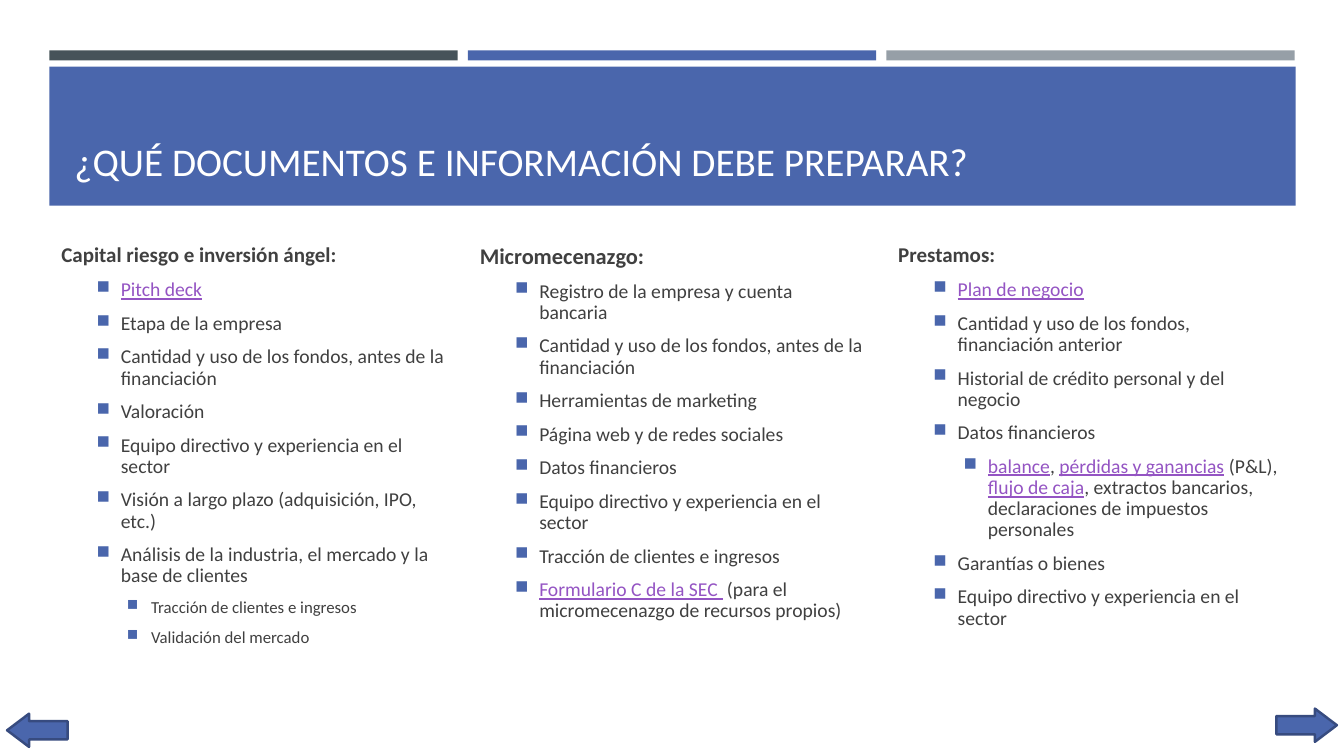
from dataclasses import dataclass

from lxml.etree import SubElement
from pptx import Presentation
from pptx.dml.color import RGBColor
from pptx.enum.shapes import MSO_SHAPE
from pptx.enum.text import MSO_ANCHOR
from pptx.oxml.ns import qn
from pptx.util import Emu, Pt


@dataclass(frozen=True)
class Theme:
    font: str = "Calibri"
    blue: str = "4A66AC"
    slate: str = "465359"
    gray: str = "969FA7"
    outline: str = "374B7F"
    body: str = "404040"
    link: str = "9454C3"
    white: str = "FFFFFF"
    title_size: int = 28
    item_size: int = 14
    detail_size: int = 12


THEME = Theme()
EMU_PER_PX = 9144
COLUMN_PITCH = 415

# Each column: heading, heading size, items as (level, size, text); |bars| enclose link text.
ITEM = (1, THEME.item_size)
DETAIL = (2, THEME.detail_size)
LARGE_DETAIL = (2, THEME.item_size)
COLUMNS = [
    ("Capital riesgo e inversión ángel:", 15, [
        (*ITEM, "|Pitch deck|"),
        (*ITEM, "Etapa de la empresa"),
        (*ITEM, "Cantidad y uso de los fondos, antes de la financiación"),
        (*ITEM, "Valoración"),
        (*ITEM, "Equipo directivo y experiencia en el sector"),
        (*ITEM, "Visión a largo plazo (adquisición, IPO, etc.)"),
        (*ITEM, "Análisis de la industria, el mercado y la base de clientes"),
        (*DETAIL, "Tracción de clientes e ingresos"),
        (*DETAIL, "Validación del mercado"),
    ]),
    ("Micromecenazgo:", 16, [
        (*ITEM, "Registro de la empresa y cuenta bancaria"),
        (*ITEM, "Cantidad y uso de los fondos, antes de la financiación"),
        (*ITEM, "Herramientas de marketing"),
        (*ITEM, "Página web y de redes sociales"),
        (*ITEM, "Datos financieros"),
        (*ITEM, "Equipo directivo y experiencia en el sector"),
        (*ITEM, "Tracción de clientes e ingresos"),
        (*ITEM, "|Formulario C de la SEC | (para el micromecenazgo de recursos propios)"),
    ]),
    ("Prestamos:", 15, [
        (*ITEM, "|Plan de negocio|"),
        (*ITEM, "Cantidad y uso de los fondos, financiación anterior"),
        (*ITEM, "Historial de crédito personal y del negocio"),
        (*ITEM, "Datos financieros"),
        (*LARGE_DETAIL, "|balance|, |pérdidas y ganancias| (P&L), |flujo de caja|, "
                        "extractos bancarios, declaraciones de impuestos personales"),
        (*ITEM, "Garantías o bienes"),
        (*ITEM, "Equipo directivo y experiencia en el sector"),
    ]),
]


def px(length):
    return Emu(length * EMU_PER_PX)


def color(code):
    return RGBColor.from_string(code)


def add_filled(slide, preset, box, fill):
    shape = slide.shapes.add_shape(preset, *map(px, box))
    shape.shadow.inherit = False
    shape.fill.solid()
    shape.fill.fore_color.rgb = color(fill)
    shape.line.fill.background()
    return shape


def add_text_frame(slide, box):
    frame = slide.shapes.add_textbox(*map(px, box)).text_frame
    frame.word_wrap = True
    return frame


def style_font(paragraph, size, code, bold=False):
    font = paragraph.font
    font.name, font.size, font.bold = THEME.font, Pt(size), bold
    font.color.rgb = color(code)


def add_bullet(paragraph, level):
    paragraph.level = level
    properties = paragraph._p.get_or_add_pPr()
    properties.set("marL", str(px(29 + 30 * level)))
    properties.set("indent", str(px(-24)))
    bullet_color = SubElement(properties, qn("a:buClr"))
    SubElement(bullet_color, qn("a:srgbClr"), val=THEME.blue)
    SubElement(properties, qn("a:buSzPct"), val="92000")
    SubElement(properties, qn("a:buChar"), char="■")


def space_paragraph(paragraph, size):
    paragraph.line_spacing = 0.9
    paragraph.space_before = Pt(size * 0.2)
    paragraph.space_after = Pt(6)


def add_linked_text(paragraph, text):
    """Write the text, styling the parts between bars as links."""
    for index, part in enumerate(text.split("|")):
        if not part:
            continue
        run = paragraph.add_run()
        run.text = part
        if index % 2:
            run.font.underline = True
            run.font.color.rgb = color(THEME.link)


def add_header(slide, left, top, width, height):
    """Three accent bars above a title band."""
    for index, fill in enumerate((THEME.slate, THEME.blue, THEME.gray)):
        add_filled(slide, MSO_SHAPE.RECTANGLE,
                   (left + index * COLUMN_PITCH, top, 405, 10), fill)
    add_filled(slide, MSO_SHAPE.RECTANGLE,
               (left, top + 16, width, height - 16), THEME.blue)
    frame = add_text_frame(slide, (left + 15, top + 30, width - 30, 108))
    frame.vertical_anchor = MSO_ANCHOR.BOTTOM
    title = frame.paragraphs[0]
    title.text = "¿QUÉ DOCUMENTOS E INFORMACIÓN DEBE PREPARAR?"
    style_font(title, THEME.title_size, THEME.white)


def add_column(slide, box, heading, heading_size, items):
    frame = add_text_frame(slide, box)
    head = frame.paragraphs[0]
    head.text = heading
    space_paragraph(head, heading_size)
    style_font(head, heading_size, THEME.body, bold=True)
    for level, size, text in items:
        item = frame.add_paragraph()
        space_paragraph(item, size)
        add_bullet(item, level)
        style_font(item, size, THEME.body)
        add_linked_text(item, text)


def add_navigation_arrow(slide, box, rotation):
    arrow = add_filled(slide, MSO_SHAPE.RIGHT_ARROW, box, THEME.blue)
    arrow.adjustments[0], arrow.adjustments[1] = 0.55, 0.66
    arrow.rotation = rotation
    arrow.line.color.rgb = color(THEME.outline)
    arrow.line.width = Pt(1.75)


def main():
    presentation = Presentation()
    presentation.slide_width, presentation.slide_height = px(1333), px(750)
    slide = presentation.slides.add_slide(presentation.slide_layouts[6])
    add_header(slide, 49, 50, 1236, 154)
    for index, column in enumerate(COLUMNS):
        add_column(slide, (51 + index * COLUMN_PITCH, 238, 402, 424), *column)
    add_navigation_arrow(slide, (1266, 703, 60, 33), 0)
    add_navigation_arrow(slide, (7, 708, 60, 33), 180)
    presentation.save("out.pptx")


if __name__ == "__main__":
    main()
